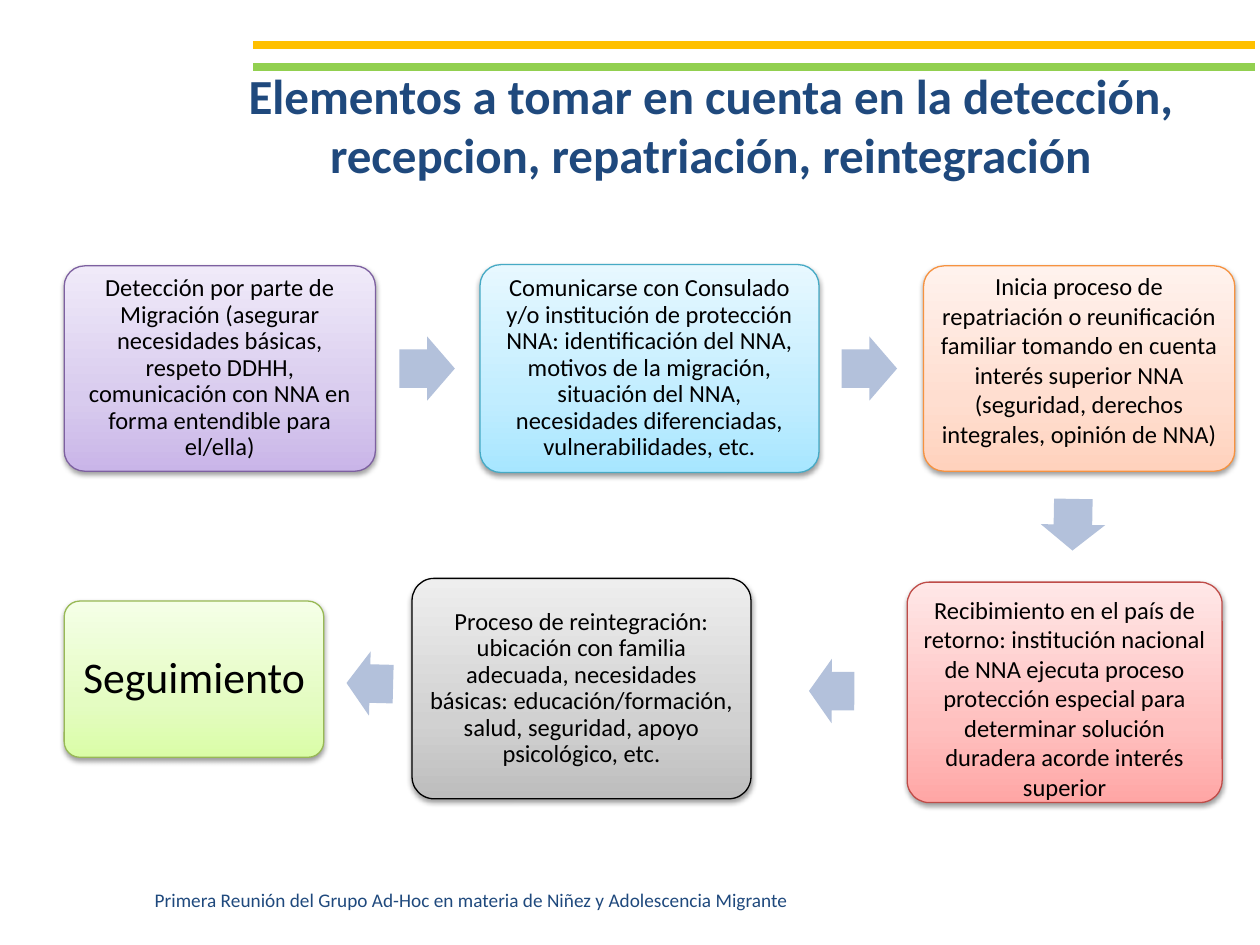
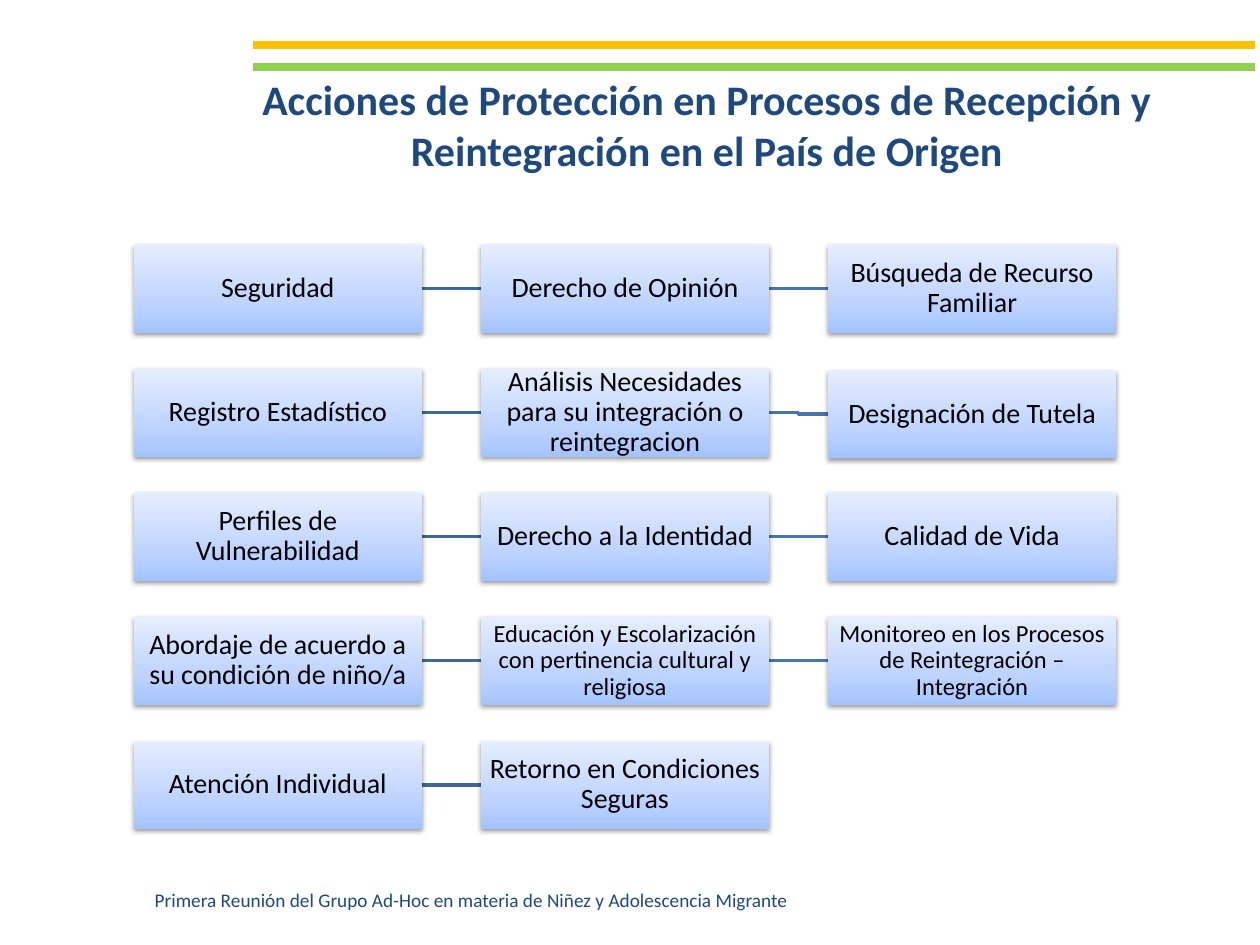
from copy import deepcopy

from pptx import Presentation
from pptx.dml.color import RGBColor
from pptx.enum.shapes import MSO_CONNECTOR, MSO_SHAPE
from pptx.enum.text import MSO_ANCHOR, MSO_AUTO_SIZE, PP_ALIGN
from pptx.oxml import parse_xml
from pptx.oxml.ns import nsdecls, qn
from pptx.util import Inches, Pt

NAVY = RGBColor(0x1F, 0x49, 0x7D)
BLACK = RGBColor(0, 0, 0)
GOLD = RGBColor(0xFF, 0xC0, 0x00)
GREEN = RGBColor(0x92, 0xD0, 0x50)
ARROW = RGBColor(0xB3, 0xC1, 0xDB)
LINKS = [RGBColor(0x3F, 0x67, 0x97), RGBColor(0x48, 0x75, 0xAC)]

# Gradient stops from bottom to top, then the outline
LILAC = [RGBColor(0xC9, 0xB5, 0xE8), RGBColor(0xD8, 0xCB, 0xEE),
         RGBColor(0xF0, 0xEA, 0xF9), RGBColor(0x7D, 0x60, 0xA0)]
AQUA = [RGBColor(0xA7, 0xE6, 0xFF), RGBColor(0xC1, 0xED, 0xFF),
        RGBColor(0xE7, 0xF8, 0xFF), RGBColor(0x46, 0xAA, 0xC5)]
PEACH = [RGBColor(0xFF, 0xD2, 0xBD), RGBColor(0xFF, 0xDE, 0xD0),
         RGBColor(0xFF, 0xF2, 0xED), RGBColor(0xF6, 0x92, 0x40)]
ROSE = [RGBColor(0xFF, 0xA6, 0xA5), RGBColor(0xFF, 0xC0, 0xBF),
        RGBColor(0xFF, 0xE7, 0xE7), RGBColor(0xBF, 0x4C, 0x48)]
GREY = [RGBColor(0xBD, 0xBD, 0xBD), RGBColor(0xD1, 0xD1, 0xD1),
        RGBColor(0xEE, 0xEE, 0xEE), BLACK]
LIME = [RGBColor(0xDA, 0xFD, 0xA7), RGBColor(0xE4, 0xFC, 0xC2),
        RGBColor(0xF5, 0xFF, 0xE7), RGBColor(0x98, 0xB9, 0x55)]
BLUE = [RGBColor(0xA4, 0xC4, 0xFF), RGBColor(0xBF, 0xD4, 0xFF),
        RGBColor(0xE6, 0xEE, 0xFF), None]

FOOTER = "Primera Reunión del Grupo Ad-Hoc en materia de Niñez y Adolescencia Migrante"
TITLES = [
    ("Elementos a tomar en cuenta en la detección, recepcion, repatriación, reintegración",
     (56.4, 13.13, 90, 16.67), 28),
    ("Acciones de Protección en Procesos de Recepción y Reintegración en el País de Origen",
     (56.1, 13.13, 87.8, 14.53), 24),
]

deck = Presentation()
deck.slide_width = Inches(10)
deck.slide_height = Inches(7.5)
WIDE, HIGH = deck.slide_width / 100, deck.slide_height / 100


def span(mid_x, mid_y, width, height):
    """Turn a centre and size in percent of the slide into left, top, width, height."""
    return (round((mid_x - width / 2) * WIDE), round((mid_y - height / 2) * HIGH),
            round(width * WIDE), round(height * HIGH))


def write(shape, text, size, color, bold=False, align=PP_ALIGN.CENTER,
          anchor=MSO_ANCHOR.MIDDLE, gap=1.0, **inset):
    frame = shape.text_frame
    look = {"word_wrap": True, "auto_size": MSO_AUTO_SIZE.NONE,
            "vertical_anchor": anchor}
    look.update({"margin_" + side: Inches(pad) for side, pad in inset.items()})
    for name, value in look.items():
        setattr(frame, name, value)
    line = frame.paragraphs[0]
    line.alignment = align
    line.line_spacing = gap
    run = line.add_run()
    run.text = text
    for name, value in {"name": "Calibri", "size": Pt(size), "bold": bold}.items():
        setattr(run.font, name, value)
    run.font.color.rgb = color


# Title, bands and footer of every slide; links collects all straight lines
slides, links = [], []
for text, box, size in TITLES:
    slide = deck.slides.add_slide(deck.slide_layouts[5])
    slides.append(slide)
    for y, color in [(4.8, GOLD), (7.07, GREEN)]:
        links.append((slide, (20.1, y), (99.6, y), color, 4.5))
    foot = slide.shapes.add_textbox(*span(54, 95.27, 85.4, 3.87))
    write(foot, FOOTER, 11, NAVY, align=PP_ALIGN.LEFT, anchor=MSO_ANCHOR.TOP)
    head = slide.shapes.title
    head.left, head.top, head.width, head.height = span(*box)
    write(head, text, size, NAVY, bold=True)
flow, grid = slides

# Steps of the process: centre and size, text, point size, colours, line gap, insets
PAD = dict.fromkeys(["left", "top", "right", "bottom"], 0.06)
STEPS = [
    ((17.45, 39, 24.7, 21.73),
     "Detección por parte de Migración (asegurar necesidades básicas, respeto DDHH, "
     "comunicación con NNA en forma entendible para el/ella)", 14, LILAC, 0.9, PAD),
    ((51.55, 39, 26.9, 22),
     "Comunicarse con Consulado y/o institución de protección NNA: identificación del "
     "NNA, motivos de la migración, situación del NNA, necesidades diferenciadas, "
     "vulnerabilidades, etc.", 14, AQUA, 0.9, PAD),
    ((85.65, 39, 24.7, 21.73),
     "Inicia proceso de repatriación o reunificación familiar tomando en cuenta interés "
     "superior NNA (seguridad, derechos integrales, opinión de NNA)",
     14, PEACH, 1.0, {**PAD, "bottom": 0.2}),
    ((84.5, 73.27, 25, 23.33),
     "Recibimiento en el país de retorno: institución nacional de NNA ejecuta proceso "
     "protección especial para determinar solución duradera acorde interés superior",
     14, ROSE, 1.0, {**PAD, "top": 0.11, "bottom": 0.02}),
    ((46.15, 72.87, 26.9, 23.33),
     "Proceso de reintegración: ubicación con familia adecuada, necesidades básicas: "
     "educación/formación, salud, seguridad, apoyo psicológico, etc.", 14, GREY, 0.9, PAD),
    ((15.4, 71.87, 20.6, 16.53), "Seguimiento", 25, LIME, 0.9, dict.fromkeys(PAD, 0.1)),
]
cards = [(flow, MSO_SHAPE.ROUNDED_RECTANGLE, *step) for step in STEPS]

for x, y, width, turn in [(33.9, 39, 4.4, 0), (69, 39, 4.4, 0), (85.15, 55.53, 4.1, 91),
                          (66, 73.13, 3.6, 180.3), (29.35, 72.33, 3.7, 181.5)]:
    arrow = flow.shapes.add_shape(MSO_SHAPE.RIGHT_ARROW, *span(x, y, width, 6.8))
    arrow.adjustments[0], arrow.adjustments[1] = 0.6, 0.5
    arrow.rotation = turn
    arrow.shadow.inherit = False
    arrow.fill.solid()
    arrow.fill.fore_color.rgb = ARROW
    arrow.line.fill.background()

# Grid of protection actions, linked along each row
ACTIONS = [
    ["Seguridad", "Derecho de Opinión", "Búsqueda de Recurso Familiar"],
    ["Registro Estadístico", "Análisis Necesidades para su integración o reintegracion",
     "Designación de Tutela"],
    ["Perfiles de Vulnerabilidad", "Derecho a la Identidad", "Calidad de Vida"],
    ["Abordaje de acuerdo a su condición de niño/a",
     "Educación y Escolarización con pertinencia cultural y religiosa",
     "Monitoreo en los Procesos de Reintegración – Integración"],
    ["Atención Individual", "Retorno en Condiciones Seguras"],
]
CELL_W, CELL_H = 22.9, 9.33
STEP_X, STEP_Y = 27.55, 13.13
SLIM = dict.fromkeys(PAD, 0.01)
for row, texts in enumerate(ACTIONS):
    for col, text in enumerate(texts):
        x, y = 22.05 + col * STEP_X, 30.53 + row * STEP_Y
        drop = 0.16 if (row, col) == (1, 2) else 0
        size = 14 if row == 3 and col else 16
        cards.append((grid, MSO_SHAPE.RECTANGLE, (x, y + drop, CELL_W, CELL_H),
                      text, size, BLUE, 0.9, SLIM))
        if col:
            links.append((grid, (x - STEP_X + CELL_W / 2, y),
                          (x - CELL_W / 2, y + drop), LINKS[col - 1], 2))

for slide, start, end, color, width in links:
    kind = MSO_CONNECTOR.STRAIGHT if start[1] == end[1] else MSO_CONNECTOR.ELBOW
    ends = [round(value * unit) for point in (start, end)
            for value, unit in zip(point, (WIDE, HIGH))]
    link = slide.shapes.add_connector(kind, *ends)
    link.line.color.rgb = color
    link.line.width = Pt(width)
    link._element.spPr.append(parse_xml(f"<a:effectLst {nsdecls('a')}/>"))

SHADOW = (f'<a:outerShdw {nsdecls("a")} blurRad="39370" dist="20320" dir="5400000" '
          'rotWithShape="0"><a:srgbClr val="000000"><a:alpha val="38000"/>'
          '</a:srgbClr></a:outerShdw>')
for slide, kind, box, text, size, colors, gap, inset in cards:
    card = slide.shapes.add_shape(kind, *span(*box))
    if kind == MSO_SHAPE.ROUNDED_RECTANGLE:
        card.adjustments[0] = 0.1
    card.fill.gradient()
    card.fill.gradient_angle = 90
    props = card._element.spPr
    stops = props.find(".//" + qn("a:gsLst"))
    stops.insert(1, deepcopy(stops[0]))
    for stop, place, color in zip(card.fill.gradient_stops, (0, 0.35, 1), colors):
        stop.position = place
        stop.color.rgb = color
    if colors[3] is None:
        card.line.fill.background()
    else:
        card.line.color.rgb = colors[3]
        card.line.width = Pt(0.75)
    card.shadow.inherit = False
    props.find(qn("a:effectLst")).append(parse_xml(SHADOW))
    write(card, text, size, BLACK, gap=gap, **inset)

deck.save("out.pptx")
